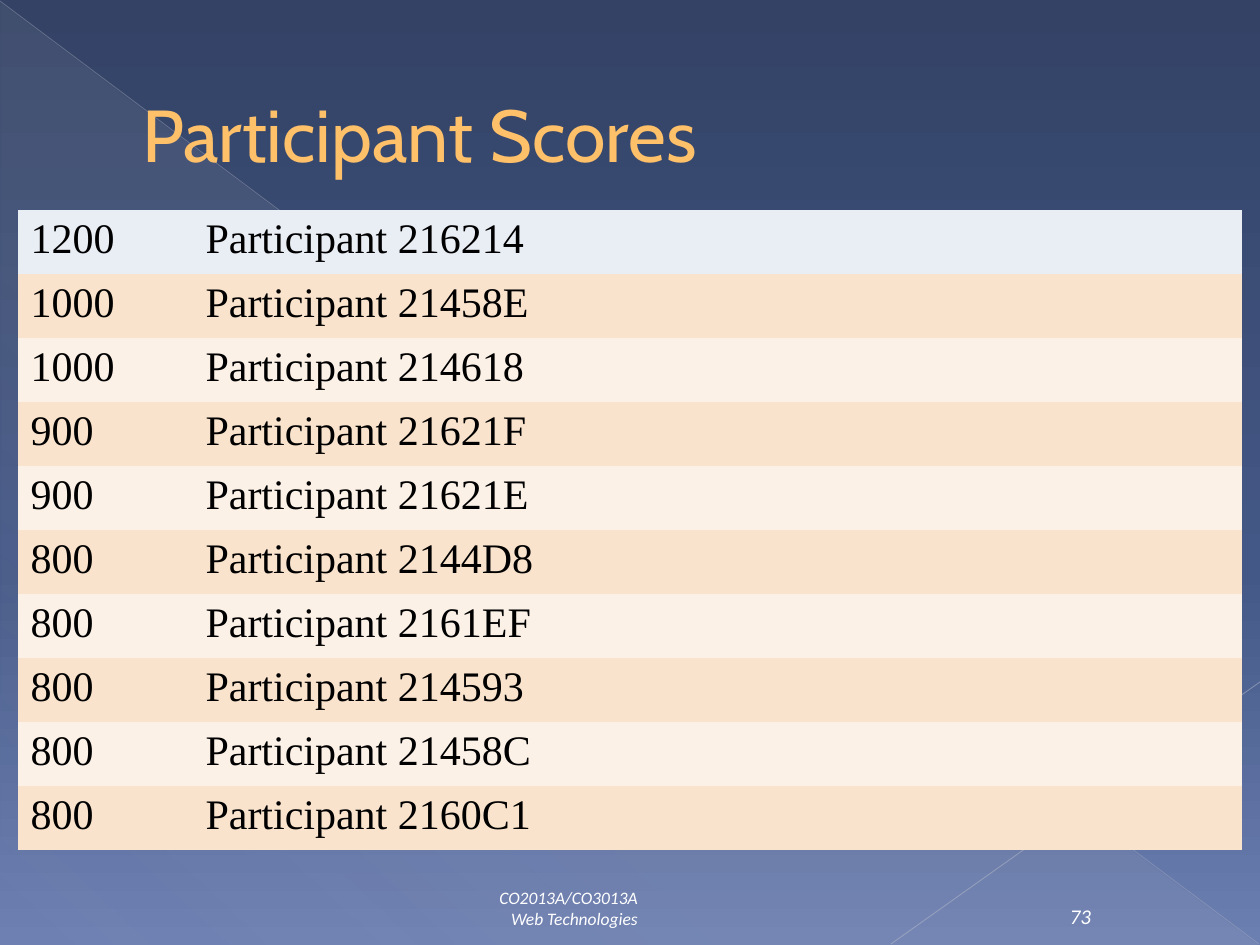
from lxml.etree import SubElement
from pptx import Presentation
from pptx.dml.color import RGBColor
from pptx.enum.shapes import MSO_CONNECTOR, MSO_SHAPE
from pptx.enum.text import MSO_ANCHOR, PP_ALIGN
from pptx.oxml.ns import qn
from pptx.util import Pt

PX = 914400 // 126
COLORS = {
    "title": "FFC06A", "white": "FFFFFF", "black": "000000",
    "head": "E9EDF4", "dark band": "F9E3CC", "light band": "FCF1E7",
    "sheen": "D4D4D6", "falling line": "B9BDC8", "rising line": "C1C4CE",
    "sky top": "334265", "sky middle": "445887", "sky bottom": "6C7FB1",
}


def set_gradient(fill, stops, angle):
    """Fill with (position %, colour name, opacity %) stops, angle clockwise."""
    fill.gradient()
    fill.gradient_angle = -angle % 360
    stop_list = fill.gradient_stops[0]._gs.getparent()
    for old_stop in list(stop_list):
        stop_list.remove(old_stop)
    for position, name, opacity in stops:
        stop = SubElement(stop_list, qn("a:gs"), pos=str(position * 1000))
        color = SubElement(stop, qn("a:srgbClr"), val=COLORS[name])
        if opacity < 100:
            SubElement(color, qn("a:alpha"), val=str(opacity * 1000))


def write(frame, text, *, font, size, color, italic=False,
          align=PP_ALIGN.LEFT, anchor=MSO_ANCHOR.TOP):
    frame.word_wrap = True
    frame.vertical_anchor = anchor
    para = frame.paragraphs[0]
    para.text = text
    para.alignment = align
    for span in para.runs:
        span.font.name = font
        span.font.size = Pt(size)
        span.font.italic = italic
        span.font.color.rgb = RGBColor.from_string(COLORS[color])


deck = Presentation()
deck.slide_width, deck.slide_height = 1260 * PX, 945 * PX
page = deck.slides.add_slide(deck.slide_layouts[6])

# Backdrop
set_gradient(page.background.fill,
             [(0, "sky top", 100), (60, "sky middle", 100), (100, "sky bottom", 100)], 90)
triangle = page.shapes.add_shape(MSO_SHAPE.RIGHT_TRIANGLE, 1 * PX, 2 * PX, 1258 * PX, 943 * PX)
triangle.shadow.inherit = False
triangle.line.fill.background()
set_gradient(triangle.fill, [(0, "sheen", 10), (70, "sheen", 8), (100, "sheen", 1)], 133)

for x1, y1, x2, y2, name, width, opacity in [
    (0, 1, 1259, 944, "falling line", 0.39, 35),
    (1260, 682, 891, 944, "rising line", 0.47, 45),
]:
    line = page.shapes.add_connector(MSO_CONNECTOR.STRAIGHT, x1 * PX, y1 * PX, x2 * PX, y2 * PX)
    line.line.width = Pt(width)
    line.line.color.rgb = RGBColor.from_string(COLORS[name])
    color = line._element.spPr.find(".//" + qn("a:srgbClr"))
    SubElement(color, qn("a:alpha"), val=str(opacity * 1000))
    SubElement(line._element.spPr, qn("a:effectLst"))

# Title and footer
title = page.shapes.add_textbox(63 * PX, 37 * PX, 1134 * PX, 193 * PX)
write(title.text_frame, "Participant Scores", font="Cabin", size=42, color="title",
      anchor=MSO_ANCHOR.MIDDLE)
title.text_frame.paragraphs[0]._p.get_or_add_pPr().set("marL", str(67 * PX))

for left, width, text, size, align in [
    (63, 587, "CO2013A/CO3013A\vWeb Technologies", 10, PP_ALIGN.RIGHT),
    (1046, 69, "73", 12, PP_ALIGN.CENTER),
]:
    box = page.shapes.add_textbox(left * PX, 893 * PX, width * PX, 42 * PX)
    write(box.text_frame, text, font="Calibri", size=size, color="white", italic=True,
          align=align, anchor=MSO_ANCHOR.BOTTOM)

# Scores
scores = [
    ("1200", "216214"), ("1000", "21458E"), ("1000", "214618"), ("900", "21621F"),
    ("900", "21621E"), ("800", "2144D8"), ("800", "2161EF"), ("800", "214593"),
    ("800", "21458C"), ("800", "2160C1"),
]
column_widths = [175, 437, 175, 437]
row_height = 64
table = page.shapes.add_table(len(scores), len(column_widths), 18 * PX, 210 * PX,
                              sum(column_widths) * PX, len(scores) * row_height * PX).table
table.first_row = table.horz_banding = False
for column, width in zip(table.columns, column_widths):
    column.width = width * PX

for index, (score, participant) in enumerate(scores):
    table.rows[index].height = row_height * PX
    band = "head" if index == 0 else "dark band" if index % 2 else "light band"
    for cell in table.rows[index].cells:
        cell.fill.solid()
        cell.fill.fore_color.rgb = RGBColor.from_string(COLORS[band])
        # Keeps the empty cells from growing or showing grid lines
        for side in ("a:lnB", "a:lnT", "a:lnR", "a:lnL"):
            border = cell._tc.get_or_add_tcPr().makeelement(qn(side), {"w": "0"})
            SubElement(border, qn("a:noFill"))
            cell._tc.tcPr.insert(0, border)
    for column, text in enumerate([score, f"Participant {participant}"]):
        write(table.cell(index, column).text_frame, text,
              font="Times New Roman", size=24, color="black")

deck.save("out.pptx")
